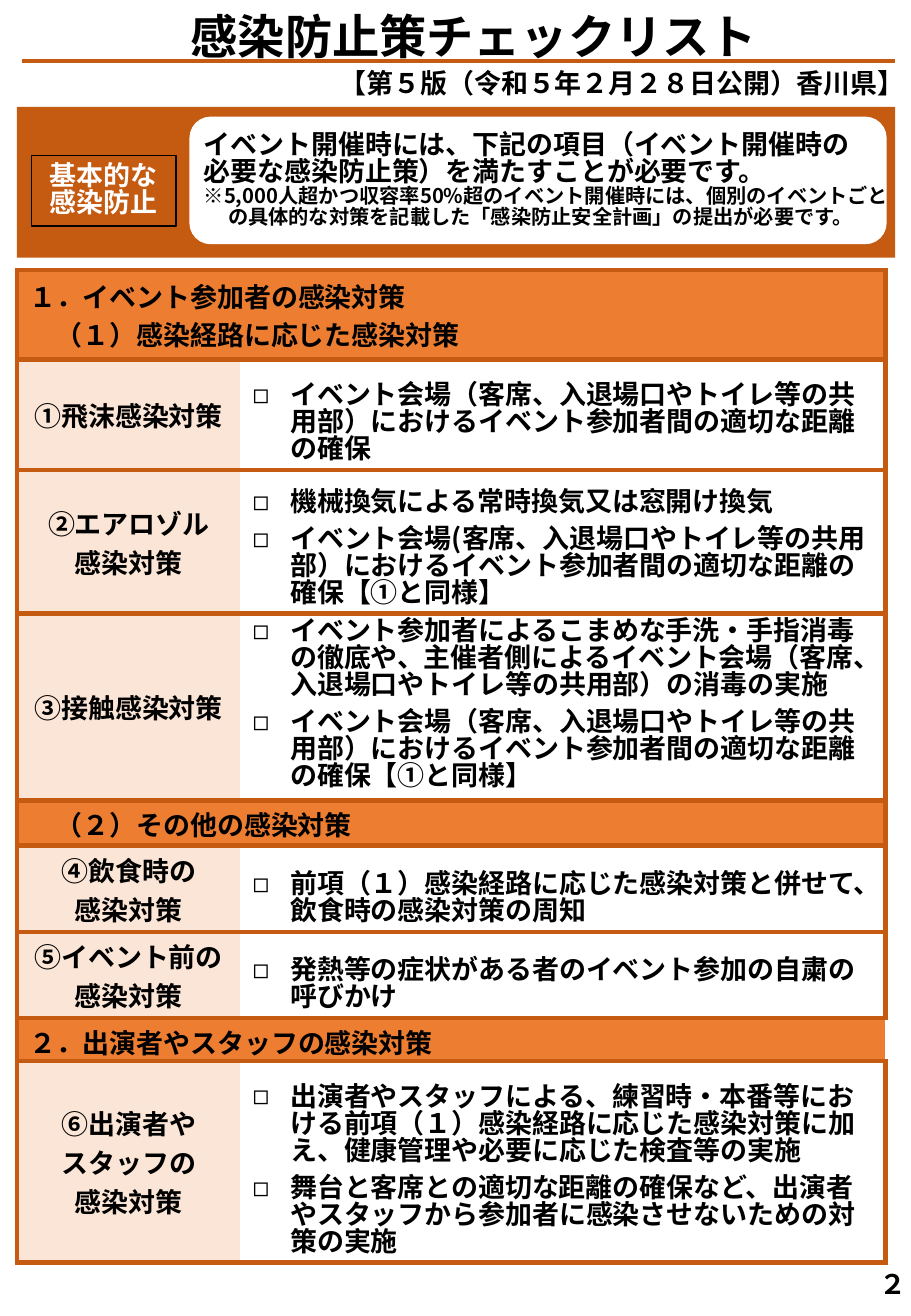
from lxml import etree
from pptx import Presentation, util as u
from pptx.dml.color import RGBColor
from pptx.enum import shapes, text
from pptx.oxml.ns import qn

FONT = "Noto Sans CJK JP"
RUST, ORANGE, PEACH = "C55A11", "ED7D31", "FBE5D6"
WHITE, BLACK = "FFFFFF", "000000"
CENTER, LEFT = text.PP_ALIGN.CENTER, text.PP_ALIGN.LEFT
TOP, MIDDLE, BOTTOM = (text.MSO_ANCHOR.TOP, text.MSO_ANCHOR.MIDDLE,
                       text.MSO_ANCHOR.BOTTOM)
LABEL_W, ITEM_W = 1.84, 5.31
DISTANCE = "イベント会場（客席、入退場口やトイレ等の共用部）におけるイベント参加者間の適切な距離の確保"

# Each row: height, then a heading's lines, or a label's lines and its check items
PARTICIPANT_ROWS = [
    (0.74, ["１．イベント参加者の感染対策", "（１）感染経路に応じた感染対策"], None),
    (0.91, ["①飛沫感染対策"], [DISTANCE]),
    (1.18, ["②エアロゾル", "感染対策"],
     ["機械換気による常時換気又は窓開け換気",
      DISTANCE.replace("（", "(") + "【①と同様】"]),
    (1.54, ["③接触感染対策"],
     ["イベント参加者によるこまめな手洗・手指消毒の徹底や、主催者側によるイベント会場（客席、入退場口やトイレ等の共用部）の消毒の実施",
      DISTANCE + "【①と同様】"]),
]
OTHER_ROWS = [
    (0.37, ["（２）その他の感染対策"], None),
    (0.71, ["④飲食時の", "感染対策"],
     ["前項（１）感染経路に応じた感染対策と併せて、飲食時の感染対策の周知"]),
    (0.71, ["⑤イベント前の感染対策"],
     ["発熱等の症状がある者のイベント参加の自粛の呼びかけ"]),
    (0.35, ["２．出演者やスタッフの感染対策"], None),
    (1.66, ["⑥出演者や", "スタッフの", "感染対策"],
     ["出演者やスタッフによる、練習時・本番等における前項（１）感染経路に応じた感染対策に加え、健康管理や必要に応じた検査等の実施",
      "舞台と客席との適切な距離の確保など、出演者やスタッフから参加者に感染させないための対策の実施"]),
]


def rgb(value):
    return RGBColor.from_string(value)


def inches(*values):
    return [u.Inches(v) for v in values]


def write(frame, lines, size=16, color=BLACK, align=LEFT, spacing=None,
          after=0, indent=0, hang=0, bullet=None, add=False):
    """Write each line as a bold paragraph; add=True keeps the text already there."""
    for number, line in enumerate(lines):
        para = frame.add_paragraph() if add or number else frame.paragraphs[0]
        props = para._p.get_or_add_pPr()
        props.set("marL", str(u.Inches(indent)))
        props.set("indent", str(u.Inches(-hang)))
        if bullet:
            etree.SubElement(props, qn("a:buFont")).set("typeface", FONT)
            etree.SubElement(props, qn("a:buChar")).set("char", bullet)
        para.alignment = align
        para.space_before, para.space_after = u.Pt(0), u.Pt(after)
        if spacing:
            para.line_spacing = spacing
        run = para.add_run()
        run.text = line
        font = run.font
        font.name, font.size, font.bold = FONT, u.Pt(size), True
        font.color.rgb = rgb(color)
        etree.SubElement(run._r.get_or_add_rPr(), qn("a:ea")).set("typeface", FONT)


def add_text(slide, box, lines, anchor=TOP, margin=0.1, **style):
    area = slide.shapes.add_textbox(*inches(*box))
    frame = area.text_frame
    frame.word_wrap, frame.vertical_anchor = True, anchor
    frame.margin_left = frame.margin_right = u.Inches(margin)
    write(frame, lines, **style)
    return frame


def add_panel(slide, kind, box, fill=None, line=None):
    panel = slide.shapes.add_shape(kind, *inches(*box))
    panel.shadow.inherit = False
    if fill:
        panel.fill.solid()
        panel.fill.fore_color.rgb = rgb(fill)
    else:
        panel.fill.background()
    if line:
        panel.line.color.rgb, panel.line.width = rgb(line), u.Pt(1)
    else:
        panel.line.fill.background()
    return panel


def draw_title(slide, left, top, width):
    title = slide.shapes.title
    title.left, title.top, title.width, title.height = inches(left, top, width, 0.57)
    frame = title.text_frame
    frame.auto_size, frame.vertical_anchor = text.MSO_AUTO_SIZE.NONE, TOP
    write(frame, ["感染防止策チェックリスト"], size=28, align=CENTER, spacing=0.9)
    rule = slide.shapes.add_connector(
        shapes.MSO_CONNECTOR.STRAIGHT, *inches(0.18, top + 0.44, 7.37, top + 0.44))
    rule.line.color.rgb, rule.line.width = rgb(RUST), u.Pt(2.25)
    etree.SubElement(rule._element.spPr, qn("a:effectLst"))
    add_text(slide, (2.62, top + 0.48, 5.01, 0.37),
             ["【第５版（令和５年２月２８日公開）香川県】"],
             align=CENTER, spacing=0.85)


def draw_banner(slide, left, top, width, height):
    rect, rounded = shapes.MSO_SHAPE.RECTANGLE, shapes.MSO_SHAPE.ROUNDED_RECTANGLE
    add_panel(slide, rect, (left, top, width, height), fill=RUST)
    add_panel(slide, rounded, (left + 1.42, top + 0.08, 5.74, 1.05), fill=WHITE)
    basics = add_panel(slide, rect, (left + 0.12, top + 0.4, 1.19, 0.58), line=BLACK)
    basics.text_frame.vertical_anchor = MIDDLE
    basics.text_frame.margin_right = 0
    write(basics.text_frame, ["基本的な", "感染防止"], color=WHITE,
          spacing=0.85, indent=0.05)
    notice = add_text(slide, (left + 1.44, top + 0.16, 5.84, 1.09),
                      ["イベント開催時には、下記の項目（イベント開催時の",
                       "必要な感染防止策）を満たすことが必要です。"], spacing=0.85)
    write(notice, ["※5,000人超かつ収容率50%超のイベント開催時には、個別のイベントごとの"
                   "具体的な対策を記載した「感染防止安全計画」の提出が必要です。"],
          size=12, spacing=0.85, indent=0.2, hang=0.2, add=True)


def style_cell(cell, fill, sides, anchor):
    """Fill the cell and rule only the named sides, out of L, R, T and B."""
    cell.vertical_anchor = anchor
    cell.margin_top = cell.margin_bottom = u.Inches(0.03)
    cell.fill.solid()
    cell.fill.fore_color.rgb = rgb(fill)
    props = cell._tc.get_or_add_tcPr()
    for place, side in enumerate("LRTB"):
        border = etree.Element(qn("a:ln" + side), w=str(u.Pt(3)))
        if side in sides:
            paint = etree.SubElement(border, qn("a:solidFill"))
            etree.SubElement(paint, qn("a:srgbClr")).set("val", RUST)
        else:
            etree.SubElement(border, qn("a:noFill"))
        props.insert(place, border)


def draw_checklist(slide, left, top, rows):
    height = sum(row[0] for row in rows)
    table = slide.shapes.add_table(
        len(rows), 2, *inches(left, top, LABEL_W + ITEM_W, height)).table
    table.first_row = table.horz_banding = False
    table.columns[0].width, table.columns[1].width = inches(LABEL_W, ITEM_W)
    for number, (row_height, label, items) in enumerate(rows):
        table.rows[number].height = u.Inches(row_height)
        label_cell, item_cell = table.cell(number, 0), table.cell(number, 1)
        if items:
            style_cell(label_cell, PEACH, "LTB", MIDDLE)
            write(label_cell.text_frame, label, align=CENTER)
            style_cell(item_cell, WHITE, "RTB", MIDDLE if row_height == 1.54 else BOTTOM)
            write(item_cell.text_frame, items, spacing=u.Pt(16), after=6,
                  indent=0.31, hang=0.31, bullet="◻")
        else:
            edge = "" if label[0].startswith("２") else "R"
            style_cell(label_cell, ORANGE, "LTB" + edge, MIDDLE)
            style_cell(item_cell, ORANGE, "TB" + edge, MIDDLE)
            label_cell.merge(item_cell)
            for place, line in enumerate(label):
                write(label_cell.text_frame, [line], add=place > 0,
                      indent=0.22 if line.startswith("（") else 0)


def main():
    deck = Presentation()
    deck.slide_width, deck.slide_height = inches(7.5, 10.83)
    slide = deck.slides.add_slide(deck.slide_layouts[5])
    draw_title(slide, 0.3, 0.06, 7.2)
    draw_banner(slide, 0.14, 0.88, 7.23, 1.24)
    draw_checklist(slide, 0.14, 2.22, PARTICIPANT_ROWS)
    draw_checklist(slide, 0.14, 6.59, OTHER_ROWS)
    add_text(slide, (7.21, 10.38, 0.29, 0.37), ["２"], anchor=MIDDLE,
             margin=0, align=CENTER)
    deck.save("out.pptx")


if __name__ == "__main__":
    main()
